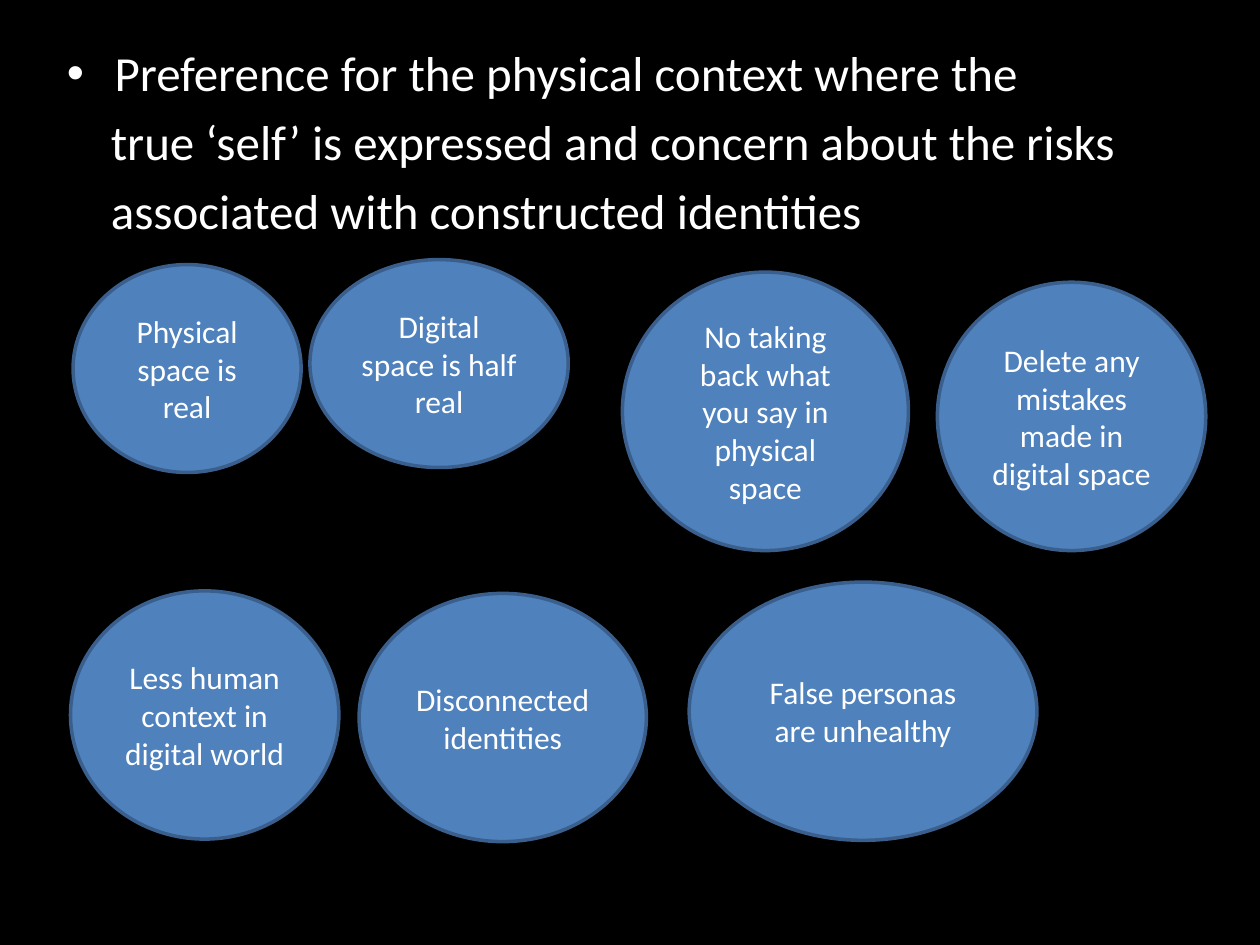
from dataclasses import dataclass

import pptx
import pptx.dml.color
import pptx.enum.shapes
import pptx.enum.text
import pptx.oxml
import pptx.oxml.ns
import pptx.util


@dataclass(frozen=True)
class Theme:
    font: str = "Calibri"
    background: str = "000000"
    text: str = "FFFFFF"
    bubble: str = "4F81BD"
    outline: str = "3A5F8C"
    statement_size: int = 28
    bubble_size: int = 18
    outline_width: int = 2


THEME = Theme()
WIDTH = pptx.util.Inches(10)
HEIGHT = pptx.util.Inches(7.5)

STATEMENT_AREA = (4.3, 3.87, 91.3, 94.67)
STATEMENT = [
    "Preference for the physical context where the",
    "true ‘self’ is expressed and concern about the risks",
    "associated with constructed identities",
]

# Text, then left, top, width and height in percent of the slide
BUBBLES = [
    ("Physical space is real", (5.8, 28, 18.1, 22)),
    ("No taking back what you say in physical space", (49.4, 28.8, 22.7, 29.47)),
    ("Delete any mistakes made in digital space", (74.4, 29.87, 21.3, 28.4)),
    ("Digital space is half real", (24.6, 27.47, 20.5, 22)),
    ("False personas are unhealthy", (54.7, 61.6, 27.6, 27.33)),
    ("Disconnected identities", (28.5, 62.8, 22.8, 26.27)),
    ("Less human context in digital world", (5.6, 62.53, 21.3, 26.27)),
]


def color(value):
    return pptx.dml.color.RGBColor.from_string(value)


def place(area):
    """Turn percentages of the slide into left, top, width and height."""
    return [int(side * share / 100)
            for side, share in zip((WIDTH, HEIGHT, WIDTH, HEIGHT), area)]


def format_runs(para, size):
    for span in para.runs:
        span.font.name = THEME.font
        span.font.size = pptx.util.Pt(size)
        span.font.color.rgb = color(THEME.text)


def set_bullet(para, symbol, margin, indent):
    properties = para._p.get_or_add_pPr()
    properties.set("marL", str(pptx.util.Inches(margin)))
    properties.set("indent", str(pptx.util.Inches(indent)))
    tag = "a:buChar" if symbol else "a:buNone"
    bullet = pptx.oxml.parse_xml(f"<{tag} {pptx.oxml.ns.nsdecls('a')}/>")
    if symbol:
        bullet.set("char", symbol)
    properties.append(bullet)


def fill_statement(box):
    box.left, box.top, box.width, box.height = place(STATEMENT_AREA)
    frame = box.text_frame
    frame.text = "\n".join(STATEMENT)
    frame.auto_size = pptx.enum.text.MSO_AUTO_SIZE.NONE
    for number, para in enumerate(frame.paragraphs):
        para.space_before = pptx.util.Pt(0.2 * THEME.statement_size)
        if number == 0:
            set_bullet(para, "•", 0.38, -0.38)
        else:
            set_bullet(para, None, 0.35, 0)
        format_runs(para, THEME.statement_size)


def add_bubble(page, text, area):
    bubble = page.shapes.add_shape(
        pptx.enum.shapes.MSO_SHAPE.OVAL, *place(area))
    bubble.shadow.inherit = False
    bubble.fill.solid()
    bubble.fill.fore_color.rgb = color(THEME.bubble)
    bubble.line.color.rgb = color(THEME.outline)
    bubble.line.width = pptx.util.Pt(THEME.outline_width)
    frame = bubble.text_frame
    frame.text = text
    frame.word_wrap = True
    frame.vertical_anchor = pptx.enum.text.MSO_ANCHOR.MIDDLE
    para = frame.paragraphs[0]
    para.alignment = pptx.enum.text.PP_ALIGN.CENTER
    format_runs(para, THEME.bubble_size)


def main():
    deck = pptx.Presentation()
    deck.slide_width, deck.slide_height = WIDTH, HEIGHT
    page = deck.slides.add_slide(deck.slide_layouts.get_by_name("Title and Content"))
    page.background.fill.solid()
    page.background.fill.fore_color.rgb = color(THEME.background)
    title = page.shapes.title.element
    title.getparent().remove(title)
    fill_statement(page.placeholders[1])
    for text, area in BUBBLES:
        add_bubble(page, text, area)
    deck.save("out.pptx")


if __name__ == "__main__":
    main()
